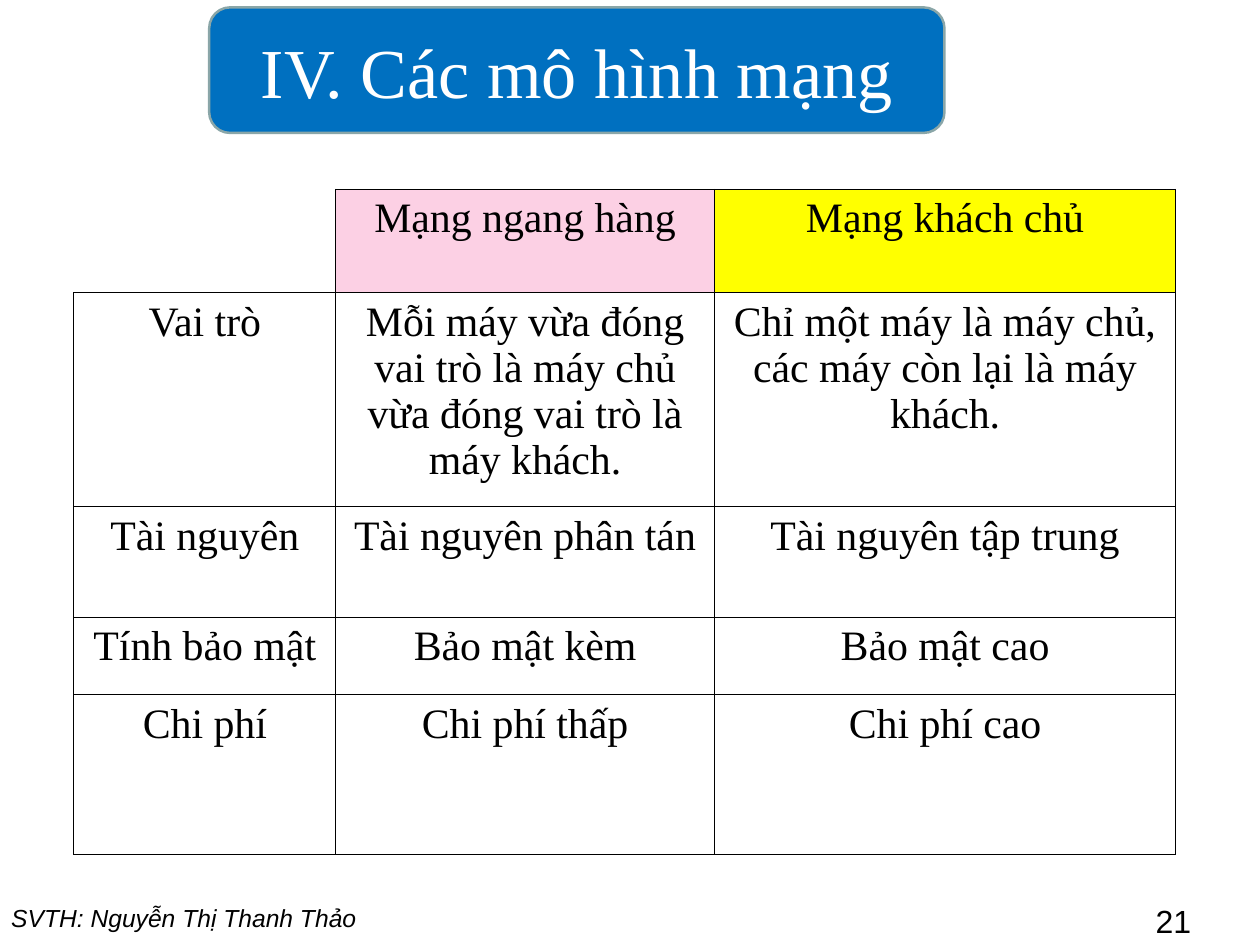
from lxml import etree
from pptx import Presentation
from pptx.dml.color import RGBColor
from pptx.enum import shapes, text
from pptx.oxml import ns
from pptx.util import Pt

BLACK = RGBColor(0x00, 0x00, 0x00)
WHITE = RGBColor(0xFF, 0xFF, 0xFF)
BLUE = RGBColor(0x00, 0x70, 0xC0)
GREY = RGBColor(0x8A, 0xA6, 0xA8)
PINK = RGBColor(0xFC, 0xD0, 0xE4)
YELLOW = RGBColor(0xFF, 0xFF, 0x00)

TITLE_FONT = {"name": "Times New Roman", "size": Pt(57)}
TABLE_FONT = {"name": "Times New Roman", "size": Pt(34)}
AUTHOR_FONT = {"name": "Arial", "size": Pt(20), "italic": True}
NUMBER_FONT = {"name": "Arial", "size": Pt(26)}
MARGINS = {
    "margin_left": Pt(10),
    "margin_right": Pt(10),
    "margin_top": Pt(5),
    "margin_bottom": Pt(5),
}

COLUMN_WIDTHS = [213, 307.5, 375]
ROW_HEIGHTS = [84, 174, 89.5, 63, 129.5]
HEADER_FILLS = [None, PINK, YELLOW]
COMPARISON = [
    ["", "Mạng ngang hàng", "Mạng khách chủ"],
    [
        "Vai trò",
        "Mỗi máy vừa đóng vai trò là máy chủ vừa đóng vai trò là máy khách.",
        "Chỉ một máy là máy chủ, các máy còn lại là máy khách.",
    ],
    ["Tài nguyên", "Tài nguyên phân tán", "Tài nguyên tập trung"],
    ["Tính bảo mật", "Bảo mật kèm", "Bảo mật cao"],
    ["Chi phí", "Chi phí thấp", "Chi phí cao"],
]


def apply(target, values):
    for name, value in values.items():
        setattr(target, name, value)


def write(frame, words, font, color=BLACK, align=text.PP_ALIGN.CENTER):
    para = frame.paragraphs[0]
    para.alignment = align
    span = para.add_run()
    span.text = words
    apply(span.font, font)
    span.font.color.rgb = color


def set_borders(cell, visible_sides):
    properties = cell._tc.get_or_add_tcPr()
    for index, side in enumerate(("L", "R", "T", "B")):
        line = etree.Element(ns.qn(f"a:ln{side}"), w=str(Pt(1)))
        if side in visible_sides:
            fill = etree.SubElement(line, ns.qn("a:solidFill"))
            etree.SubElement(fill, ns.qn("a:srgbClr"), val=str(BLACK))
        else:
            etree.SubElement(line, ns.qn("a:noFill"))
        properties.insert(index, line)


def add_title(page, left, top, width, height):
    area = [Pt(value) for value in (left, top, width, height)]
    panel = page.shapes.add_shape(shapes.MSO_SHAPE.ROUNDED_RECTANGLE, *area)
    panel.shadow.inherit = False
    panel.fill.solid()
    panel.fill.fore_color.rgb = BLUE
    panel.line.color.rgb = GREY
    panel.line.width = Pt(2)

    title = page.shapes.title
    panel.element.addnext(title.element)
    apply(title, dict(zip(("left", "top", "width", "height"), area)))
    frame = title.text_frame
    apply(frame, {
        **MARGINS,
        "word_wrap": True,
        "auto_size": text.MSO_AUTO_SIZE.NONE,
        "vertical_anchor": text.MSO_ANCHOR.MIDDLE,
    })
    write(frame, "IV. Các mô hình mạng", TITLE_FONT, WHITE)


def add_comparison(page, left, top):
    table = page.shapes.add_table(
        len(ROW_HEIGHTS), len(COLUMN_WIDTHS), Pt(left), Pt(top),
        Pt(sum(COLUMN_WIDTHS)), Pt(sum(ROW_HEIGHTS)),
    ).table
    apply(table, {"first_row": False, "horz_banding": False})
    for column, width in zip(table.columns, COLUMN_WIDTHS):
        column.width = Pt(width)
    for row, height in zip(table.rows, ROW_HEIGHTS):
        row.height = Pt(height)

    for row_index, entries in enumerate(COMPARISON):
        for column_index, words in enumerate(entries):
            cell = table.cell(row_index, column_index)
            apply(cell, MARGINS)
            color = HEADER_FILLS[column_index] if row_index == 0 else None
            if color is None:
                cell.fill.background()
            else:
                cell.fill.solid()
                cell.fill.fore_color.rgb = color
            set_borders(cell, "LRTB" if words else "RB")
            if words:
                write(cell.text_frame, words, TABLE_FONT)


def add_footer_text(page, left, top, width, height, words, font):
    box = page.shapes.add_textbox(Pt(left), Pt(top), Pt(width), Pt(height))
    box.text_frame.word_wrap = True
    write(box.text_frame, words, font, align=text.PP_ALIGN.LEFT)


def main():
    deck = Presentation()
    deck.slide_width, deck.slide_height = Pt(1023.84), Pt(767.52)
    page = deck.slides.add_slide(deck.slide_layouts.get_by_name("Title Only"))
    add_footer_text(page, 2, 729.5, 498, 32, "SVTH: Nguyễn Thị Thanh Thảo", AUTHOR_FONT)
    add_footer_text(page, 932, 729, 66, 38.5, "21", NUMBER_FONT)
    add_comparison(page, 60, 153.75)
    add_title(page, 170, 6, 597.5, 102)
    deck.save("out.pptx")


if __name__ == "__main__":
    main()
